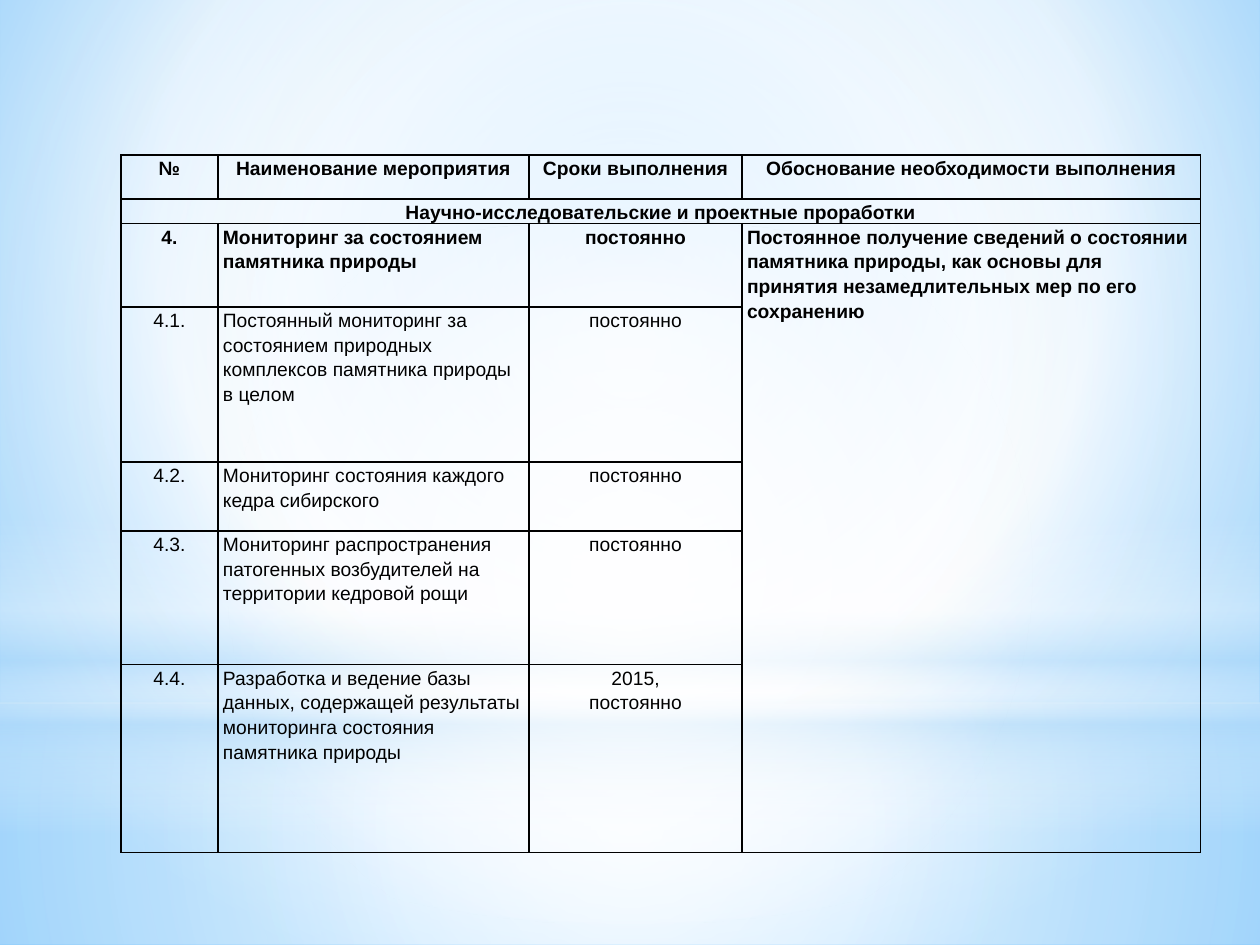
from lxml.etree import SubElement as Sub
from pptx import Presentation
from pptx.dml.color import RGBColor as RGB
from pptx.enum.shapes import MSO_SHAPE as Kind
from pptx.enum.text import PP_ALIGN as Align
from pptx.oxml.ns import qn
from pptx.util import Inches, Pt

WIDE, HIGH = 10, 7.5
BLACK = RGB(0, 0, 0)
WHITE = RGB(0xFF, 0xFF, 0xFF)
PALE = RGB(0xB4, 0xDC, 0xFA)
SKY = RGB(0x9E, 0xD5, 0xFF)
BLUE = RGB(0x5B, 0xB9, 0xFF)
MID = (50, 50, 50, 50)

BACK = [(0, SKY, 100), (60, WHITE, 100), (100, BLUE, 100)]
GLOWS = [
    (Kind.RECTANGLE, 5.58, 1.92,
     [(0, WHITE, 91), (37, WHITE, 76), (100, PALE, 79)], MID),
    (Kind.RECTANGLE, 0, 5.58,
     [(0, WHITE, 89), (48, WHITE, 62), (100, PALE, 79)], MID),
    (Kind.RECTANGLE, 4.12, 2.5,
     [(0, WHITE, 0), (29, WHITE, 30), (45, PALE, 40),
      (55, WHITE, 26), (65, PALE, 60), (100, WHITE, 0)], None),
    (Kind.OVAL, 1.75, 5.58, [(0, WHITE, 100), (56, WHITE, 0)], MID),
]

COLS = [0.77, 2.47, 1.69, 3.64]
ROWS = [0.35, 0.19, 0.66, 1.23, 0.55, 1.06, 1.49]
TEXTS = [
    ["№", "Наименование мероприятия", "Сроки выполнения",
     "Обоснование необходимости выполнения"],
    ["Научно-исследовательские и проектные проработки"],
    ["4.", "Мониторинг за состоянием памятника природы", "постоянно",
     "Постоянное получение сведений о состоянии памятника природы, "
     "как основы для принятия незамедлительных мер по его сохранению"],
    ["4.1.", "Постоянный мониторинг за состоянием природных комплексов "
     "памятника природы в целом", "постоянно"],
    ["4.2.", "Мониторинг состояния каждого кедра сибирского", "постоянно"],
    ["4.3.", "Мониторинг распространения патогенных возбудителей на "
     "территории кедровой рощи", "постоянно"],
    ["4.4.", "Разработка и ведение базы данных, содержащей результаты "
     "мониторинга состояния памятника природы", "2015,\nпостоянно"],
]


def blend(fill, root, stops, focus):
    """Fill with a radial gradient around focus, or a vertical one."""
    fill.gradient()
    grad = root.find(".//" + qn("a:gradFill"))
    for part in list(grad):
        grad.remove(part)
    group = Sub(grad, qn("a:gsLst"))
    for place, color, alpha in stops:
        stop = Sub(group, qn("a:gs"), pos=str(place * 1000))
        tint = Sub(stop, qn("a:srgbClr"), val=str(color))
        Sub(tint, qn("a:alpha"), val=str(alpha * 1000))
    if focus:
        way = Sub(grad, qn("a:path"), path="circle")
        sides = {side: str(share * 1000) for side, share in zip("ltrb", focus)}
        Sub(way, qn("a:fillToRect"), **sides)
    else:
        Sub(grad, qn("a:lin"), ang="5400000", scaled="0")


def glow(slide, kind, top, tall, stops, focus):
    """Lay a band of light over the full width."""
    shape = slide.shapes.add_shape(
        kind, 0, Inches(top), Inches(WIDE), Inches(tall))
    shape.shadow.inherit = False
    shape.line.fill.background()
    blend(shape.fill, shape._element.spPr, stops, focus)


def frame(cell):
    """Give a cell thin black borders, tight margins and no fill."""
    props = cell._tc.get_or_add_tcPr()
    for side in "LRTB":
        line = Sub(props, qn("a:ln" + side), w=str(Pt(1)))
        Sub(Sub(line, qn("a:solidFill")), qn("a:srgbClr"), val=str(BLACK))
    cell.fill.background()
    cell.margin_left = cell.margin_right = Inches(0.04)
    cell.margin_top = cell.margin_bottom = 0


def write(cell, text, bold, align):
    """Put one paragraph of text into a cell."""
    para = cell.text_frame.paragraphs[0]
    para.text = text
    para.alignment = align
    para.line_spacing = 1.15
    font = para.font
    font.name, font.size, font.bold = "Arial", Pt(11), bold
    font.color.rgb = BLACK


def plan(slide):
    """Add the table of measures."""
    table = slide.shapes.add_table(
        len(ROWS), len(COLS), Inches(0.96), Inches(1.23),
        Inches(sum(COLS)), Inches(sum(ROWS))).table
    table.first_row = table.horz_banding = False
    for col, size in zip(table.columns, COLS):
        col.width = Inches(size)
    for row, size in zip(table.rows, ROWS):
        row.height = Inches(size)
    for cell in table.iter_cells():
        frame(cell)
        write(cell, "", False, Align.LEFT)
    table.cell(1, 0).merge(table.cell(1, 3))
    table.cell(2, 3).merge(table.cell(6, 3))
    for y, texts in enumerate(TEXTS):
        for x, text in enumerate(texts):
            left = y > 1 and x in (1, 3)
            align = Align.LEFT if left else Align.CENTER
            write(table.cell(y, x), text, y < 3, align)


def main():
    """Build the slide and save it."""
    deck = Presentation()
    deck.slide_width, deck.slide_height = Inches(WIDE), Inches(HIGH)
    slide = deck.slides.add_slide(deck.slide_layouts[6])
    blend(slide.background.fill, slide._element, BACK, (20, 10, 20, 60))
    for item in GLOWS:
        glow(slide, *item)
    plan(slide)
    deck.save("out.pptx")


if __name__ == "__main__":
    main()
